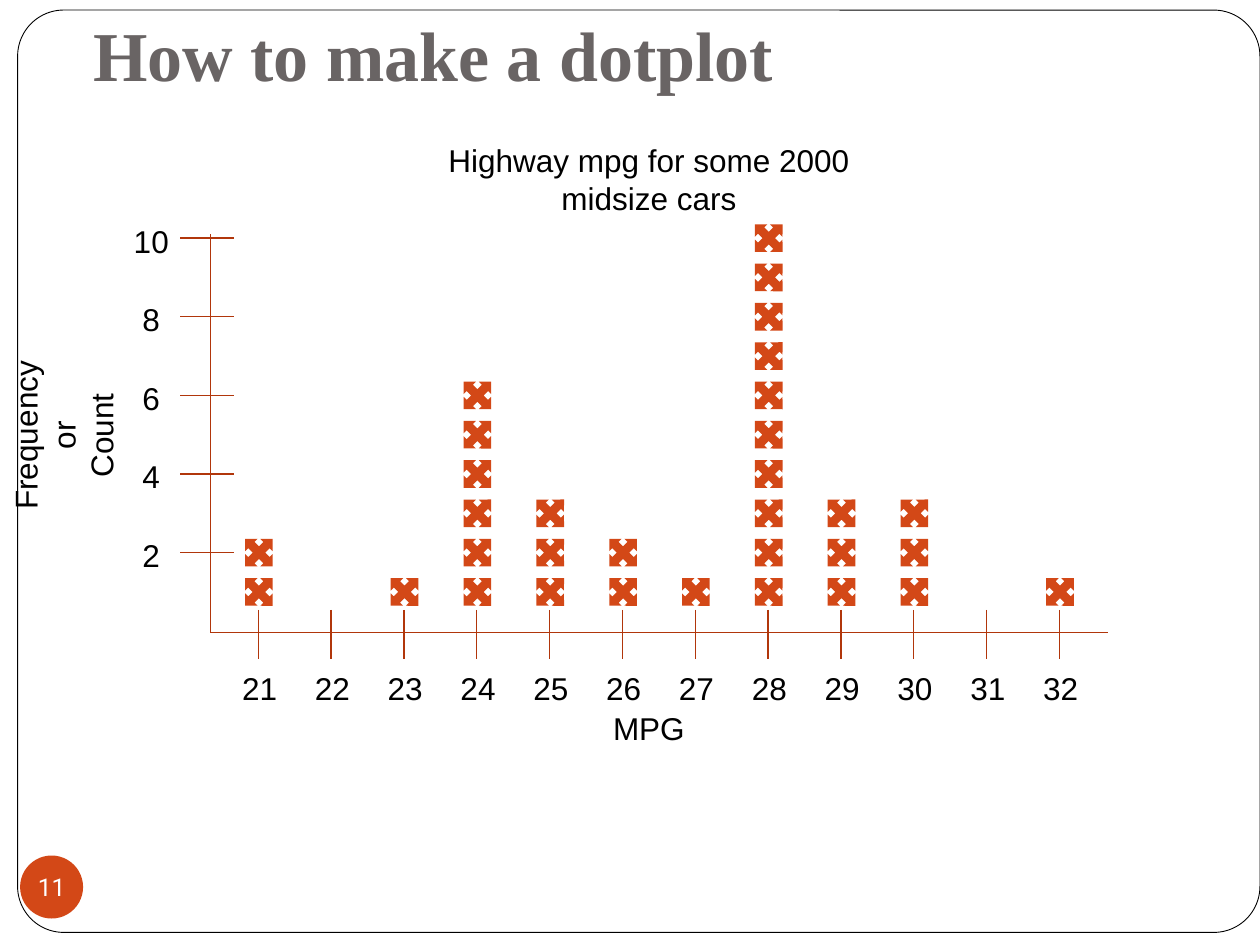
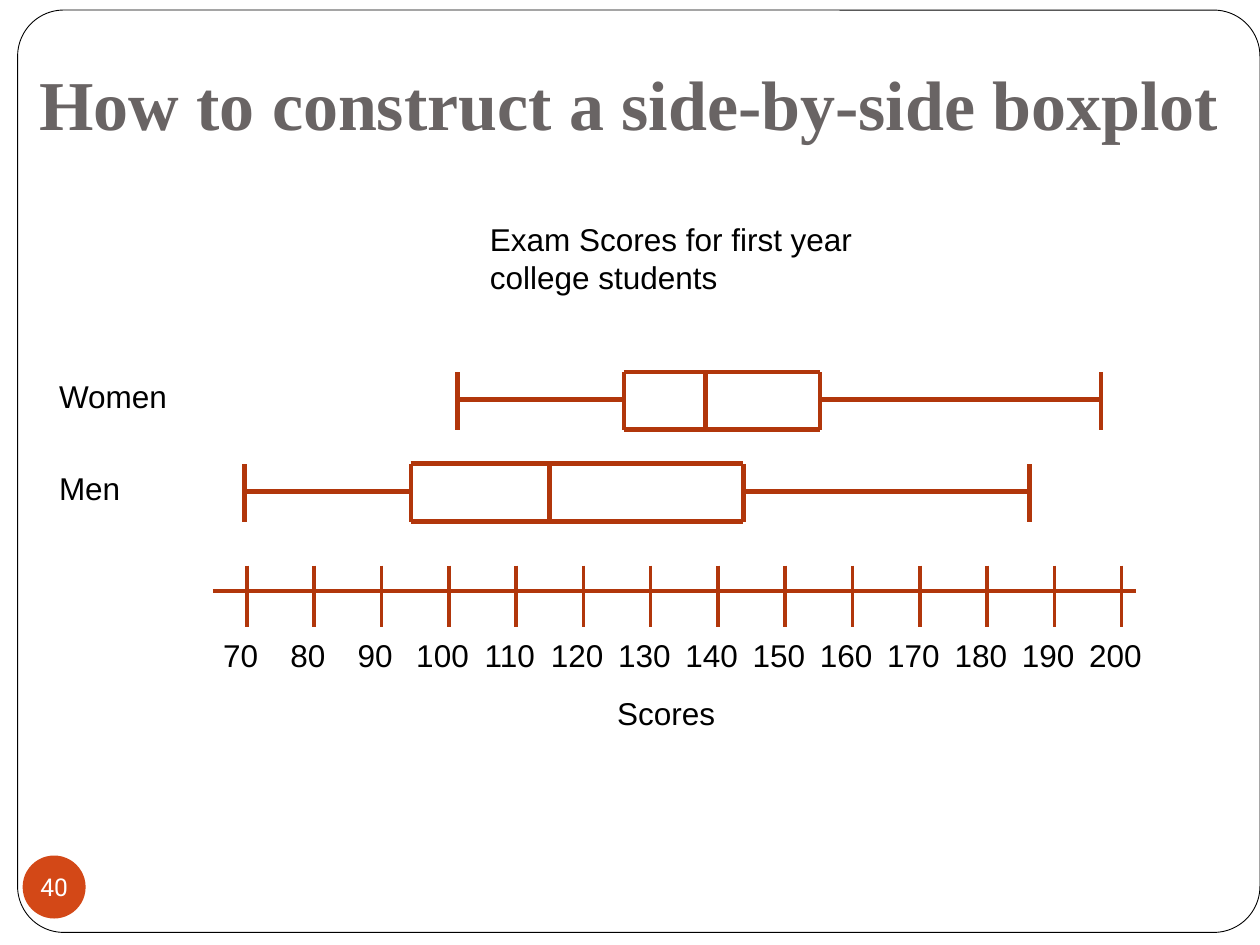
from dataclasses import dataclass

from lxml import etree
from pptx import Presentation
from pptx.dml.color import RGBColor
from pptx.enum.shapes import MSO_CONNECTOR, MSO_SHAPE
from pptx.enum.text import MSO_ANCHOR, MSO_AUTO_SIZE, PP_ALIGN
from pptx.oxml.ns import qn
from pptx.util import Inches, Pt

LEFT, CENTER = PP_ALIGN.LEFT, PP_ALIGN.CENTER
TOP, MIDDLE, BOTTOM = MSO_ANCHOR.TOP, MSO_ANCHOR.MIDDLE, MSO_ANCHOR.BOTTOM
NO_FIT = MSO_AUTO_SIZE.NONE
ROUND_RECT, OVAL = MSO_SHAPE.ROUNDED_RECTANGLE, MSO_SHAPE.OVAL
CROSS = MSO_SHAPE.QUAD_ARROW
STRAIGHT = MSO_CONNECTOR.STRAIGHT

COLUMNS, ROWS = 100, 75
TITLE_ONLY = 5


@dataclass(frozen=True)
class Theme:
    paper: str = "FFFFFF"
    ink: str = "000000"
    title: str = "696464"
    accent: str = "D34817"
    line: str = "B1360B"
    title_font: str = "Times New Roman"
    body_font: str = "Arial"
    badge_font: str = "Roboto"
    title_size: int = 40
    body_size: int = 18
    badge_size: int = 14


THEME = Theme()


def write(tf, text, *, font=THEME.body_font, size=THEME.body_size,
          color=THEME.ink, bold=False, align=LEFT, anchor=TOP, wrap=True):
    """Fill a text frame, one paragraph for each line of the text."""
    tf.word_wrap = wrap
    tf.auto_size = NO_FIT
    tf.vertical_anchor = anchor
    for i, line in enumerate(text.split("\n")):
        p = tf.add_paragraph() if i else tf.paragraphs[0]
        p.alignment = align
        r = p.add_run()
        r.text = line
        r.font.name, r.font.size, r.font.bold = font, Pt(size), bold
        r.font.color.rgb = RGBColor.from_string(color)


class Deck:
    """Holds the theme and the current slide; lengths are grid columns and rows."""

    def __init__(self, theme):
        self.theme = theme
        self.prs = Presentation()
        self.prs.slide_width, self.prs.slide_height = Inches(10), Inches(7.5)
        self.slide = None

    def x(self, columns):
        return round(self.prs.slide_width * columns / COLUMNS)

    def y(self, rows):
        return round(self.prs.slide_height * rows / ROWS)

    def box(self, left, top, width, height):
        return self.x(left), self.y(top), self.x(width), self.y(height)

    def new_slide(self, title, title_box, number, badge_left, title_inset=1):
        t = self.theme
        self.slide = self.prs.slides.add_slide(self.prs.slide_layouts[TITLE_ONLY])
        frame = self.shape(ROUND_RECT, 1.4, 0.8, 98.6, 73.2, t.paper, outline=t.ink)
        frame.adjustments[0] = 0.05
        self.slide.shapes.element.insert(2, frame.element)

        sp = self.slide.shapes.title
        sp.left, sp.top, sp.width, sp.height = self.box(*title_box)
        tf = sp.text_frame
        tf.margin_left, tf.margin_right = self.x(title_inset), self.x(1)
        tf.margin_top, tf.margin_bottom = self.y(0.5), self.y(1)
        write(tf, title, font=t.title_font, size=t.title_size, color=t.title,
              bold=True, anchor=BOTTOM)

        badge = self.shape(OVAL, badge_left, 67.9, 5, 5, t.accent)
        tf = badge.text_frame
        tf.margin_left = tf.margin_right = tf.margin_top = tf.margin_bottom = 0
        write(tf, str(number), font=t.badge_font, size=t.badge_size,
              color=t.paper, align=CENTER, anchor=MIDDLE, wrap=False)

    def shape(self, kind, left, top, width, height, fill, outline=None):
        sp = self.slide.shapes.add_shape(kind, *self.box(left, top, width, height))
        sp.shadow.inherit = False
        sp.fill.solid()
        sp.fill.fore_color.rgb = RGBColor.from_string(fill)
        if outline:
            sp.line.color.rgb = RGBColor.from_string(outline)
            sp.line.width = Pt(0.5)
        else:
            sp.line.fill.background()
        return sp

    def text(self, text, left, top, width, height=4, vertical=False, **fmt):
        sp = self.slide.shapes.add_textbox(*self.box(left, top, width, height))
        write(sp.text_frame, text, **fmt)
        if vertical:
            sp.text_frame._txBody.bodyPr.set("vert", "vert270")

    def line(self, x1, y1, x2, y2, weight):
        cxn = self.slide.shapes.add_connector(
            STRAIGHT, self.x(x1), self.y(y1), self.x(x2), self.y(y2))
        cxn.line.color.rgb = RGBColor.from_string(self.theme.line)
        cxn.line.width = Pt(weight)
        etree.SubElement(cxn.element.spPr, qn("a:effectLst"))

    def cross(self, center_x, center_y, size=3.1):
        sp = self.shape(CROSS, center_x - size / 2, center_y - size / 2,
                        size, size, self.theme.accent)
        sp.rotation = 315


def dotplot(deck):
    cars_by_mpg = {21: 2, 22: 0, 23: 1, 24: 6, 25: 3, 26: 2,
                   27: 1, 28: 10, 29: 3, 30: 3, 31: 0, 32: 1}
    axis_x, axis_y, weight = 16.7, 50.2, 0.75
    first_x, mpg_step = 20.5, 5.78
    first_y, count_step = 46.98, 3.12

    deck.new_slide("How to make a dotplot", (5, 0, 90, 8.6), 11, 1.6,
                   title_inset=2.4)
    deck.text("Highway mpg for some 2000 midsize cars", 34.6, 10.7, 33.8, 7.1,
              align=CENTER)
    deck.text("Frequency or\nCount", 0, 26.9, 11.1, 15.3, vertical=True,
              align=CENTER)
    deck.text("MPG", 34.6, 55.8, 33.8, align=CENTER)

    deck.line(axis_x, 18.6, axis_x, axis_y, weight)
    deck.line(axis_x, axis_y, 87.9, axis_y, weight)
    for count in range(2, 11, 2):
        y = first_y - (count - 1) * count_step
        deck.line(14.3, y, 18.6, y, weight)
        deck.text(str(count), 8.9, y - 1.8, 6.2, align=CENTER)
    for i, (mpg, cars) in enumerate(cars_by_mpg.items()):
        x = first_x + i * mpg_step
        deck.line(x, 48.4, x, 52.3, weight)
        deck.text(str(mpg), x - 3.1, 52.6, 6.4, align=CENTER)
        for n in range(cars):
            deck.cross(x + 0.05, first_y - n * count_step)


def boxplot(deck, label, five_numbers, top, weight=2.5):
    """Draw one row from its low, first quartile, median, third quartile, high."""
    low, q1, _, q3, high = five_numbers
    bottom, middle = top + 4.6, top + 2.2
    deck.text(label, 3.7, top - 0.1, 21.2)
    for x in five_numbers:
        deck.line(x, bottom, x, top, weight)
    for start, end, y in ((low, q1, middle), (q3, high, middle),
                          (q1, q3, top), (q1, q3, bottom)):
        deck.line(start, y, end, y, weight)


def side_by_side_boxplot(deck):
    first_x, score_step, label_width = 19.6, 5.34, 7.4

    deck.new_slide("How to construct a side-by-side boxplot",
                   (2.1, 0, 97.9, 12.5), 40, 1.8)
    deck.text("Exam Scores for first year college students", 37.9, 17, 33.3, 7.1)
    deck.text("Scores", 48, 54.6, 21.2)
    deck.line(16.9, 46.9, 90.2, 46.9, 2.5)
    for i, score in enumerate(range(70, 201, 10)):
        x = first_x + i * score_step
        deck.line(x, 44.9, x, 49.8, 2)
        deck.text(str(score), x - 0.5 - label_width / 2, 50, label_width,
                  align=CENTER)

    boxplot(deck, "Women", (36.3, 49.5, 56, 65.1, 87.4), 29.5)
    boxplot(deck, "Men", (19.4, 32.6, 43.6, 59, 81.7), 36.8)


def main():
    deck = Deck(THEME)
    dotplot(deck)
    side_by_side_boxplot(deck)
    deck.prs.save("out.pptx")


if __name__ == "__main__":
    main()
